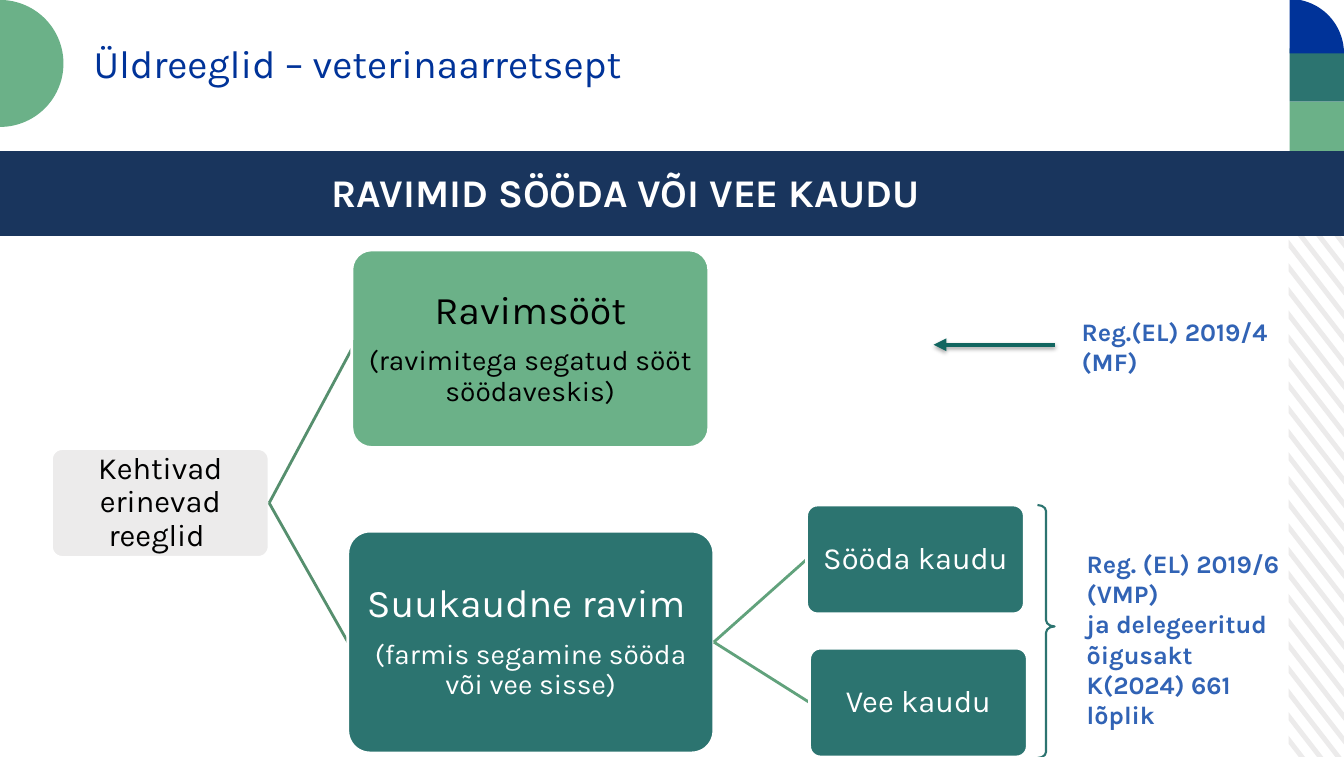
"""Build the slide on veterinary prescriptions for medicines given in feed or water."""
import math
from dataclasses import dataclass

import lxml.etree
import pptx
import pptx.dml.color
import pptx.enum.shapes
import pptx.enum.text
import pptx.oxml
import pptx.oxml.ns
import pptx.util

EMU_PER_PX = 9144
FONT = "Karla"
COLOURS = {
    "white": "FFFFFF", "black": "000000", "grey": "ECEBEB", "blue": "003399",
    "navy": "19355D", "reference": "3163B5", "green": "6BB188", "teal": "2C7470",
    "branch": "568F6E", "twig": "61A27C", "arrow": "126660",
}
SHAPE = pptx.enum.shapes.MSO_SHAPE
ALIGN = pptx.enum.text.PP_ALIGN
STRIPE_LEFT, STRIPE_RIGHT, STRIPE_TOP, STRIPE_BOTTOM = 1278, 1333, 154, 751
STRIPE_RISE, STRIPE_THICKNESS, STRIPE_STEP, STRIPE_COUNT = 71, 8, 23.44, 28
STRIPE_START = 97


@dataclass(frozen=True)
class Line:
    text: str
    size: int


@dataclass(frozen=True)
class Node:
    key: str
    left: int
    top: int
    width: int
    height: int
    fill: str
    ink: str
    lines: tuple[Line, ...]
    parent: str = ""
    link: str = ""


@dataclass(frozen=True)
class Label:
    left: int
    top: int
    width: int
    height: int
    ink: str
    lines: tuple[Line, ...]
    bold: bool = False
    centred: bool = False
    grows: bool = False


NODES = (
    Node("rules", 51, 445, 216, 108, "grey", "black",
         (Line("Kehtivad erinevad reeglid ", 22),)),
    Node("feed", 349, 248, 354, 196, "green", "black",
         (Line("Ravimsööt", 28), Line("(ravimitega segatud sööt söödaveskis)", 20)),
         "rules", "branch"),
    Node("oral", 345, 527, 363, 220, "teal", "white",
         (Line("Suukaudne ravim ", 28), Line("(farmis segamine sööda või vee sisse)", 20)),
         "rules", "branch"),
    Node("in feed", 800, 501, 216, 108, "teal", "white",
         (Line("Sööda kaudu", 22),), "oral", "twig"),
    Node("in water", 803, 643, 216, 108, "teal", "white",
         (Line("Vee kaudu", 22),), "oral", "twig"),
)
LABELS = (
    Label(204, 162, 833, 65, "white", (Line("RAVIMID SÖÖDA VÕI VEE KAUDU", 28),),
          bold=True, centred=True),
    Label(83, 34, 876, 58, "blue", (Line("Üldreeglid – veterinaarretsept", 28),)),
    Label(1063, 309, 215, 71, "reference",
          (Line("Reg.(EL) 2019/4", 18), Line("(MF)", 18)), bold=True, grows=True),
    Label(1068, 539, 215, 192, "reference",
          (Line("Reg. (EL) 2019/6 (VMP)", 18),
           Line("ja delegeeritud õigusakt K(2024) 661 lõplik", 18)), bold=True, grows=True),
)


def px(length: float) -> pptx.util.Emu:
    return pptx.util.Emu(round(length * EMU_PER_PX))


def colour(name: str) -> pptx.dml.color.RGBColor:
    return pptx.dml.color.RGBColor.from_string(COLOURS[name])


def paint(shape, fill: str) -> None:
    shape.shadow.inherit = False
    shape.fill.solid()
    shape.fill.fore_color.rgb = colour(fill)
    shape.line.fill.background()


def outline(shape, ink: str, width: float) -> None:
    shape.line.color.rgb = colour(ink)
    shape.line.width = pptx.util.Pt(width)


def draw_polygons(shapes, polygons: list[list[tuple[float, float]]], fill: str) -> None:
    contours = [[(px(x), px(y)) for x, y in polygon] for polygon in polygons]
    builder = shapes.build_freeform(*contours[0][0], scale=1.0)
    for index, contour in enumerate(contours):
        if index:
            builder.move_to(*contour[0])
        builder.add_line_segments(contour[1:], close=True)
    paint(builder.convert_to_shape(), fill)


def stripe_edge(start: float) -> list[tuple[float, float]]:
    slope = STRIPE_RISE / (STRIPE_RIGHT - STRIPE_LEFT)
    heights = (max(start, STRIPE_TOP), min(start + STRIPE_RISE, STRIPE_BOTTOM))
    return [(STRIPE_LEFT + (y - start) / slope, y) for y in heights]


def sector(x: int, y: int, radius: int, first: int, last: int) -> list[tuple[float, float]]:
    angles = [math.radians(degree) for degree in range(first, last + 1, 3)]
    return [(x, y)] + [(x + radius * math.cos(a), y + radius * math.sin(a)) for a in angles]


def draw_block(shapes, left: int, top: int, width: int, height: int, fill: str) -> None:
    paint(shapes.add_shape(SHAPE.RECTANGLE, px(left), px(top), px(width), px(height)), fill)


def write_lines(frame, lines: tuple[Line, ...], ink: str, bold: bool, align) -> None:
    frame.word_wrap = True
    for index, line in enumerate(lines):
        paragraph = frame.add_paragraph() if index else frame.paragraphs[0]
        paragraph.alignment = align
        run = paragraph.add_run()
        run.text = line.text
        run.font.name = FONT
        run.font.size = pptx.util.Pt(line.size)
        run.font.bold = bold
        run.font.color.rgb = colour(ink)


def draw_label(shapes, label: Label) -> None:
    frame = shapes.add_textbox(px(label.left), px(label.top),
                               px(label.width), px(label.height)).text_frame
    align = ALIGN.CENTER if label.centred else ALIGN.LEFT
    write_lines(frame, label.lines, label.ink, label.bold, align)
    if label.grows:
        frame.auto_size = pptx.enum.text.MSO_AUTO_SIZE.SHAPE_TO_FIT_TEXT


def draw_link(shapes, x1: int, y1: int, x2: int, y2: int, ink: str, width: float):
    link = shapes.add_connector(pptx.enum.shapes.MSO_CONNECTOR.STRAIGHT,
                                px(x1), px(y1), px(x2), px(y2))
    outline(link, ink, width)
    effects = lxml.etree.SubElement(link._element.spPr, pptx.oxml.ns.qn("a:effectLst"))
    return link, effects


def draw_node(shapes, node: Node, drawn: dict) -> None:
    link = None
    if node.parent:
        link, _ = draw_link(shapes, 0, 0, 0, 0, node.link, 2)
        link.begin_connect(drawn[node.parent], 3)
    box = shapes.add_shape(SHAPE.ROUNDED_RECTANGLE, px(node.left), px(node.top),
                           px(node.width), px(node.height))
    box.adjustments[0] = 0.1
    paint(box, node.fill)
    outline(box, "white", 2)
    if link is not None:
        link.end_connect(box, 1)
    frame = box.text_frame
    frame.margin_left = frame.margin_right = frame.margin_top = frame.margin_bottom = px(2)
    frame.vertical_anchor = pptx.enum.text.MSO_ANCHOR.MIDDLE
    write_lines(frame, node.lines, node.ink, False, ALIGN.CENTER)
    for paragraph, line in zip(frame.paragraphs, node.lines):
        paragraph.line_spacing = 0.9
        paragraph.space_after = pptx.util.Pt(round(line.size * 0.35))
    drawn[node.key] = box


def draw_arrow(shapes) -> None:
    arrow, effects = draw_link(shapes, 1046, 342, 926, 342, "arrow", 3)
    lxml.etree.SubElement(arrow.line._get_or_add_ln(), pptx.oxml.ns.qn("a:tailEnd"),
                          type="triangle")
    effects.append(pptx.oxml.parse_xml(
        f'<a:outerShdw {pptx.oxml.ns.nsdecls("a")} blurRad="39370" dist="22860" dir="5400000" '
        'rotWithShape="0"><a:srgbClr val="000000"><a:alpha val="35000"/></a:srgbClr>'
        '</a:outerShdw>'))


def main() -> None:
    deck = pptx.Presentation()
    deck.slide_width, deck.slide_height = px(1333), px(751)
    shapes = deck.slides.add_slide(deck.slide_layouts[6]).shapes

    starts = [STRIPE_START + STRIPE_STEP * n for n in range(STRIPE_COUNT)]
    draw_polygons(shapes, [stripe_edge(s) + stripe_edge(s + STRIPE_THICKNESS)[::-1]
                           for s in starts], "grey")
    draw_block(shapes, 1279, 48, 55, 53, "teal")
    draw_block(shapes, 1279, 101, 55, 53, "green")
    draw_polygons(shapes, [sector(1279, 53, 54, -90, 0)], "blue")
    draw_polygons(shapes, [sector(0, 63, 63, -90, 90)], "green")
    draw_block(shapes, -2, 150, 1336, 84, "navy")

    drawn = {}
    for node in NODES:
        draw_node(shapes, node, drawn)
    for label in LABELS:
        draw_label(shapes, label)
    draw_arrow(shapes)

    brace = shapes.add_shape(SHAPE.RIGHT_BRACE, px(1029), px(501), px(17), px(251))
    brace.adjustments[0], brace.adjustments[1] = 0.36, 0.48
    paint(brace, "white")
    brace.fill.background()
    outline(brace, "teal", 1.5)
    deck.save("out.pptx")


if __name__ == "__main__":
    main()
